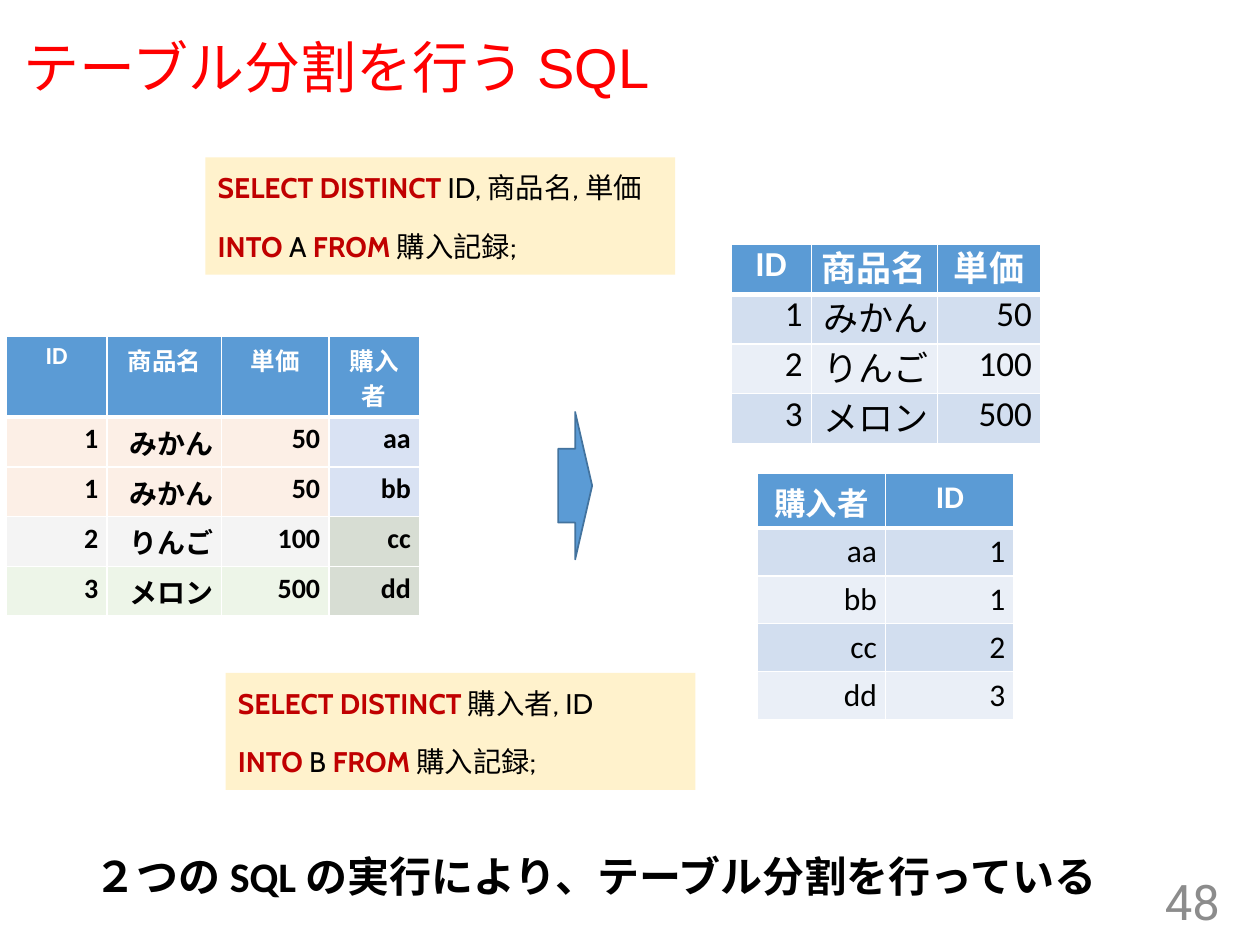
"""Build the slide on splitting a table with two SQL statements."""
from lxml import etree
from pptx import Presentation, util as u
from pptx.dml import color
from pptx.enum import shapes, text
from pptx.oxml import ns

deck = Presentation()
deck.slide_width, deck.slide_height = u.Inches(10), u.Inches(7.5)
slide = deck.slides.add_slide(deck.slide_layouts[6])
unit = deck.slide_width // 100
LEFT, MID, RIGHT = text.PP_ALIGN.LEFT, text.PP_ALIGN.CENTER, text.PP_ALIGN.RIGHT
BLUE, WHITE, BLACK, RED = "5B9BD5", "FFFFFF", "000000", "C00000"
BANDS = ["D2DEEF", "EAEFF7"]


def ink(fill, tone):
    fill.solid()
    fill.fore_color.rgb = color.RGBColor.from_string(tone)


def write(frame, words, size=18, font="Calibri", tone=BLACK, bold=False,
          align=LEFT, space=None, before=None, key=None):
    frame.word_wrap = True
    for row, line in enumerate(words.split("\n")):
        para = frame.add_paragraph() if row else frame.paragraphs[0]
        para.alignment, para.line_spacing = align, space
        if before:
            para.space_before = u.Pt(before)
        for spot, part in enumerate(line.split("|")):
            strong = bool(key) and spot % 2 == 0
            run = para.add_run()
            run.text = part
            run.font.size, run.font.name = u.Pt(size), font
            run.font.bold = bold or strong
            ink(run.font.fill, key if strong else tone)


notes = [
    ((0.9, 1.9, 99.1, 7.3), "テーブル分割を行う SQL",
     dict(size=32, font="Arial", tone="FF0000", space=0.9)),
    ((75.3, 69.5, 22.5, 4), "48",
     dict(size=28, font="Roboto", tone="8C8C8C", align=RIGHT)),
    ((6.5, 67, 82.9, 5), "２つの SQL の実行により、テーブル分割を行っている",
     dict(size=24, bold=True)),
]
for at, words, form in notes:
    box = slide.shapes.add_textbox(*[int(n * unit) for n in at])
    box.text_frame.vertical_anchor = (
        text.MSO_ANCHOR.TOP if form.get("bold") else text.MSO_ANCHOR.MIDDLE)
    write(box.text_frame, words, **form)

PEACH, GREY, GREEN = "F4B183", "C9C9C9", "A9D18E"
SKY, MOSS = "4472C4", "385723"
grids = [
    dict(at=(60.1, 37.6), cols=[10.2, 10.2], rows=[4.3] + [3.8] * 4,
         head=18, size=18,
         data=["購入者 ID", "aa 1", "bb 1", "cc 2", "dd 3"]),
    dict(at=(58, 19.4), cols=[6.4, 10, 8.2], rows=[3.95] * 4, head=20, size=20,
         space=0.8,
         data=["ID 商品名 単価", "1 みかん 50", "2 りんご 100", "3 メロン 500"]),
    dict(at=(0.5, 26.7), cols=[8, 9.1, 8.5, 7.2], rows=[6.4] + [3.95] * 4,
         head=14, size=16,
         tints=[(PEACH, SKY), (PEACH, SKY), (GREY, MOSS), (GREEN, MOSS)],
         data=["ID 商品名 単価 購入者", "1 みかん 50 aa", "1 みかん 50 bb",
               "2 りんご 100 cc", "3 メロン 500 dd"]),
]
for grid in grids:
    cols, rows, tints = grid["cols"], grid["rows"], grid.get("tints")
    at = (*grid["at"], sum(cols), sum(rows))
    table = slide.shapes.add_table(
        len(rows), len(cols), *[int(n * unit) for n in at]).table
    table.first_row = table.horz_banding = False
    for col, wide in zip(table.columns, cols):
        col.width = int(wide * unit)
    for r, line in enumerate(grid["data"]):
        table.rows[r].height = int(rows[r] * unit)
        for c, words in enumerate(line.split()):
            cell = table.cell(r, c)
            cell.margin_left = cell.margin_right = u.Inches(0.07)
            cell.margin_top = cell.margin_bottom = u.Inches(0.04)
            write(cell.text_frame, words, size=grid["size"] if r else grid["head"],
                  tone=BLACK if r else WHITE, bold=not r or bool(tints),
                  align=RIGHT if r else MID, space=grid.get("space"))
            prop = cell._tc.get_or_add_tcPr()
            for side in "LRTB":
                thick = (r, side) in [(0, "B"), (1, "T")]
                edge = etree.SubElement(prop, ns.qn("a:ln" + side),
                                        w=str(u.Pt(3 if thick else 1)))
                paint = etree.SubElement(edge, ns.qn("a:solidFill"))
                etree.SubElement(paint, ns.qn("a:srgbClr"), val=WHITE)
            if r and tints:
                ink(cell.fill, tints[r - 1][c == len(cols) - 1])
                tint = prop.find(ns.qn("a:solidFill")).find(ns.qn("a:srgbClr"))
                etree.SubElement(tint, ns.qn("a:alpha"), val="20000")
            else:
                ink(cell.fill, BANDS[(r - 1) % 2] if r else BLUE)

RECT = shapes.MSO_SHAPE.RECTANGLE
blocks = [
    ((44.3, 32.7, 2.7, 11.7), shapes.MSO_SHAPE.RIGHT_ARROW, BLUE, None),
    ((16.3, 12.5, 37.3, 9.3), RECT, "FFF2CC",
     "SELECT DISTINCT |ID, 商品名, 単価\nINTO| A |FROM |購入記録;"),
    ((17.9, 53.4, 37.3, 9.3), RECT, "FFF2CC",
     "SELECT DISTINCT |購入者, ID\nINTO| B |FROM |購入記録;"),
]
for at, kind, tone, words in blocks:
    block = slide.shapes.add_shape(kind, *[int(n * unit) for n in at])
    block.shadow.inherit = False
    ink(block.fill, tone)
    if words:
        block.line.fill.background()
        block.text_frame.vertical_anchor = text.MSO_ANCHOR.TOP
        write(block.text_frame, words, size=16.2, font="Cabin", space=1.2,
              before=10, key=RED)
    else:
        ink(block.line.fill, "43739E")
        block.line.width = u.Pt(1)

deck.save("out.pptx")
